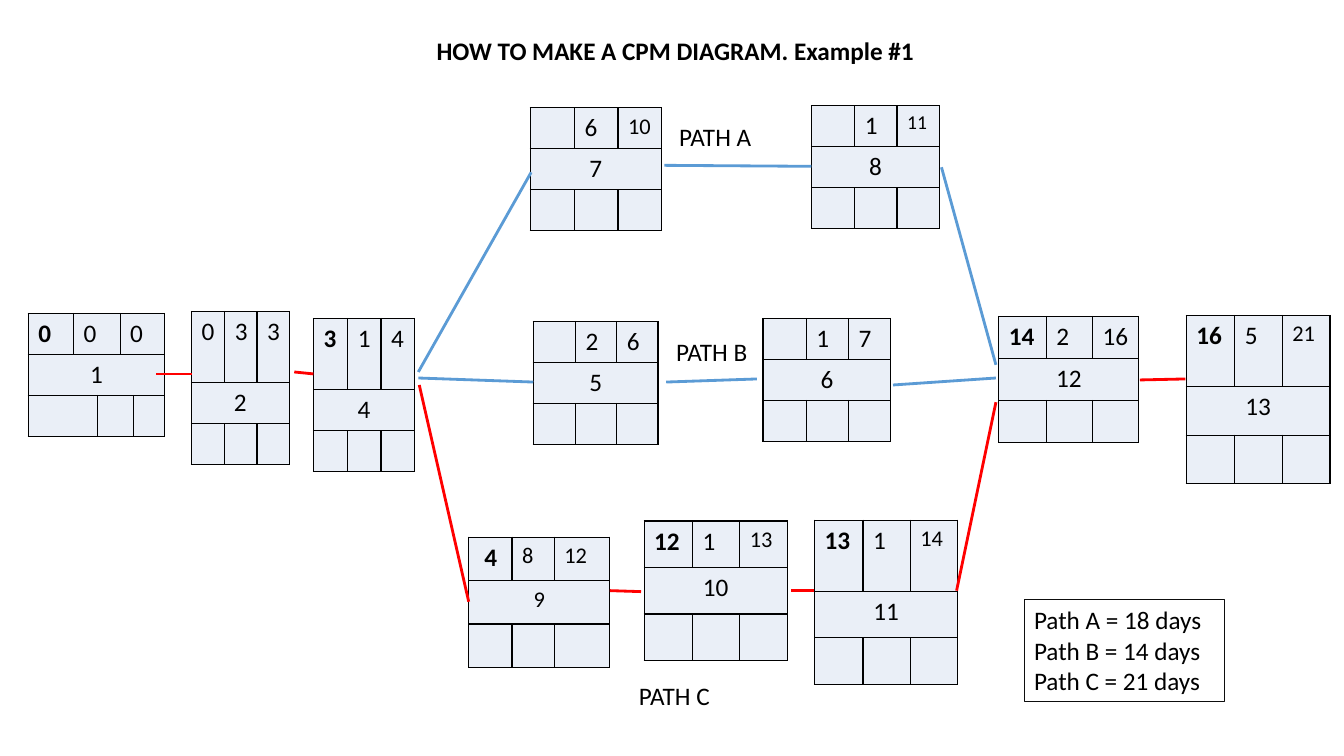
"""Build a slide with a critical path diagram of thirteen-step project nodes."""
from lxml.etree import SubElement
from pptx import Presentation
from pptx.dml.color import RGBColor
from pptx.enum.shapes import MSO_CONNECTOR, MSO_SHAPE
from pptx.enum.text import MSO_ANCHOR, MSO_AUTO_SIZE, PP_ALIGN
from pptx.oxml import parse_xml
from pptx.oxml.ns import nsdecls, qn
from pptx.util import Pt

BLACK = RGBColor(0x00, 0x00, 0x00)
EDGE = RGBColor(0x0D, 0x0D, 0x0D)
PALE = RGBColor(0xEA, 0xEF, 0xF7)
RED = RGBColor(0xFF, 0x00, 0x00)
BLUE = RGBColor(0x5B, 0x9B, 0xD5)


def write(para, text, size=18, bold=False):
    run = para.add_run()
    run.text = text
    run.font.name = "Calibri"
    run.font.size = Pt(size)
    run.font.bold = bold
    run.font.color.rgb = BLACK


def dress(cell):
    cell.fill.solid()
    cell.fill.fore_color.rgb = PALE
    props = cell._tc.get_or_add_tcPr()
    for spot, side in enumerate(("lnL", "lnR", "lnT", "lnB")):
        props.insert(spot, parse_xml(
            f'<a:{side} {nsdecls("a")} w="12700"><a:solidFill>'
            f'<a:srgbClr val="{BLACK}"/></a:solidFill></a:{side}>'))


deck = Presentation()
deck.slide_width, deck.slide_height = Pt(960), Pt(540)
slide = deck.slides.add_slide(deck.slide_layouts[5])
shapes = slide.shapes

title = shapes.title
title.left, title.top, title.width, title.height = Pt(122.4), Pt(26.6), Pt(720), Pt(24.5)
frame = title.text_frame
frame.auto_size = MSO_AUTO_SIZE.NONE
frame.vertical_anchor = MSO_ANCHOR.BOTTOM
para = frame.paragraphs[0]
para.alignment = PP_ALIGN.CENTER
para.line_spacing = 0.9
write(para, "HOW TO MAKE A CPM DIAGRAM. Example #1", bold=True)

# name, left, top, column widths, row heights, start, days, end, end size
LOW = (29.3, 29.3, 29.3)
nodes = [
    ("1", 20.2, 223.9, (32.4, 16.5, 16, 9.4, 22.3), LOW, "0", "0", "0", 18),
    ("2", 136.8, 222.5, (23.8, 23, 23), (50.9, 29.3, 29.3), "", "3", "3", 18),
    ("4", 223.9, 227.5, (24.5, 23.8, 23.8), (50.9, 29.3, 29.3), "3", "1", "4", 18),
    ("5", 380.9, 229.7, (30.2, 29.5, 29.5), LOW, "", "2", "6", 18),
    ("6", 545, 227.5, (31, 30.2, 30.2), LOW, "", "1", "7", 18),
    ("12", 713.5, 226.1, (33.8, 33.1, 33.1), (30, 30, 30), "14", "2", "16", 18),
    ("13", 847.4, 225.4, (34.6, 34, 34), (50.9, 34.6, 34.6), "16", "5", "21", 16),
    ("7", 378.7, 77, (31.7, 31, 31), LOW, "", "6", "10", 16),
    ("9", 334.8, 383.8, (31, 30.2, 39.6), (31, 31, 31), "4", "8", "12", 16),
    ("8", 579.6, 75.6, (31, 30.2, 30.2), LOW, "", "1", "11", 14),
    ("10", 460.1, 372.2, (34.6, 33.8, 33.8), (33.2, 33.2, 33.2), "12", "1", "13", 16),
    ("11", 581.8, 371.5, (34.6, 33.8, 33.8), (50.9, 33.2, 33.2), "13", "1", "14", 16),
]
for name, left, top, cols, rows, start, days, end, size in nodes:
    grid = shapes.add_table(3, len(cols), Pt(left), Pt(top),
                            Pt(sum(cols)), Pt(sum(rows))).table
    grid.first_row = grid.horz_banding = False
    for col, width in zip(grid.columns, cols):
        col.width = Pt(width)
    for row, height in zip(grid.rows, rows):
        row.height = Pt(height)
    for cell in grid.iter_cells():
        dress(cell)
    last = len(cols) - 1
    grid.cell(1, 0).merge(grid.cell(1, last))
    spots = (0, 1, 2)
    if last == 4:
        spots = (0, 1, 3)
        for row, col in ((0, 1), (0, 3), (2, 0), (2, 2)):
            grid.cell(row, col).merge(grid.cell(row, col + 1))
    small = 16 if name == "9" else 18
    if name == "2":
        write(grid.cell(0, 0).text_frame.paragraphs[0], "0")
    elif start:
        write(grid.cell(0, 0).text_frame.paragraphs[0], start, bold=True)
    if name == "9":
        grid.cell(0, 0).margin_left = Pt(11.2)
    write(grid.cell(0, spots[1]).text_frame.paragraphs[0], days, small)
    write(grid.cell(0, spots[2]).text_frame.paragraphs[0], end, size)
    para = grid.cell(1, 0).text_frame.paragraphs[0]
    para.alignment = PP_ALIGN.CENTER
    write(para, name, small)

links = [
    (RED, 111.6, 267.1, 136.8, 267.1), (RED, 210.2, 265.7, 223.9, 267.1),
    (RED, 814.3, 271.4, 846.7, 270.7), (RED, 435.6, 421.9, 457.9, 422.6),
    (RED, 565.2, 421.9, 581.8, 421.9), (RED, 683.3, 421.9, 711.4, 287.3),
    (RED, 299.5, 275, 334.8, 429.8), (BLUE, 637.9, 275, 711.4, 270),
    (BLUE, 298.8, 270, 380.9, 272.9), (BLUE, 475.9, 272.9, 540.7, 270.7),
    (BLUE, 474.5, 118.1, 579.6, 118.8), (BLUE, 298.8, 265.7, 379.4, 123.1),
    (BLUE, 672.5, 119.5, 711.4, 260.6),
]
for color, *ends in links:
    link = shapes.add_connector(MSO_CONNECTOR.STRAIGHT, *map(Pt, ends))
    link.line.color.rgb = color
    link.line.width = Pt(2)
    SubElement(link._element.spPr, qn("a:effectLst"))

for text, left, top in (("PATH C", 449.3, 482.4), ("PATH B", 475.9, 236.9),
                        ("PATH A", 478.1, 82.8)):
    frame = shapes.add_textbox(Pt(left), Pt(top), Pt(66), Pt(29)).text_frame
    frame.word_wrap = False
    frame.auto_size = MSO_AUTO_SIZE.SHAPE_TO_FIT_TEXT
    write(frame.paragraphs[0], text)

box = shapes.add_shape(MSO_SHAPE.RECTANGLE, Pt(731.5), Pt(428.4), Pt(143.3), Pt(72.7))
box.shadow.inherit = False
box.fill.background()
box.line.color.rgb = EDGE
box.line.width = Pt(0.75)
frame = box.text_frame
frame.word_wrap = True
frame.auto_size = MSO_AUTO_SIZE.SHAPE_TO_FIT_TEXT
frame.vertical_anchor = MSO_ANCHOR.TOP
for spot, (path, days) in enumerate((("A", 18), ("B", 14), ("C", 21))):
    para = frame.add_paragraph() if spot else frame.paragraphs[0]
    para.alignment = PP_ALIGN.LEFT
    write(para, f"Path {path} = {days} days")

deck.save("out.pptx")
